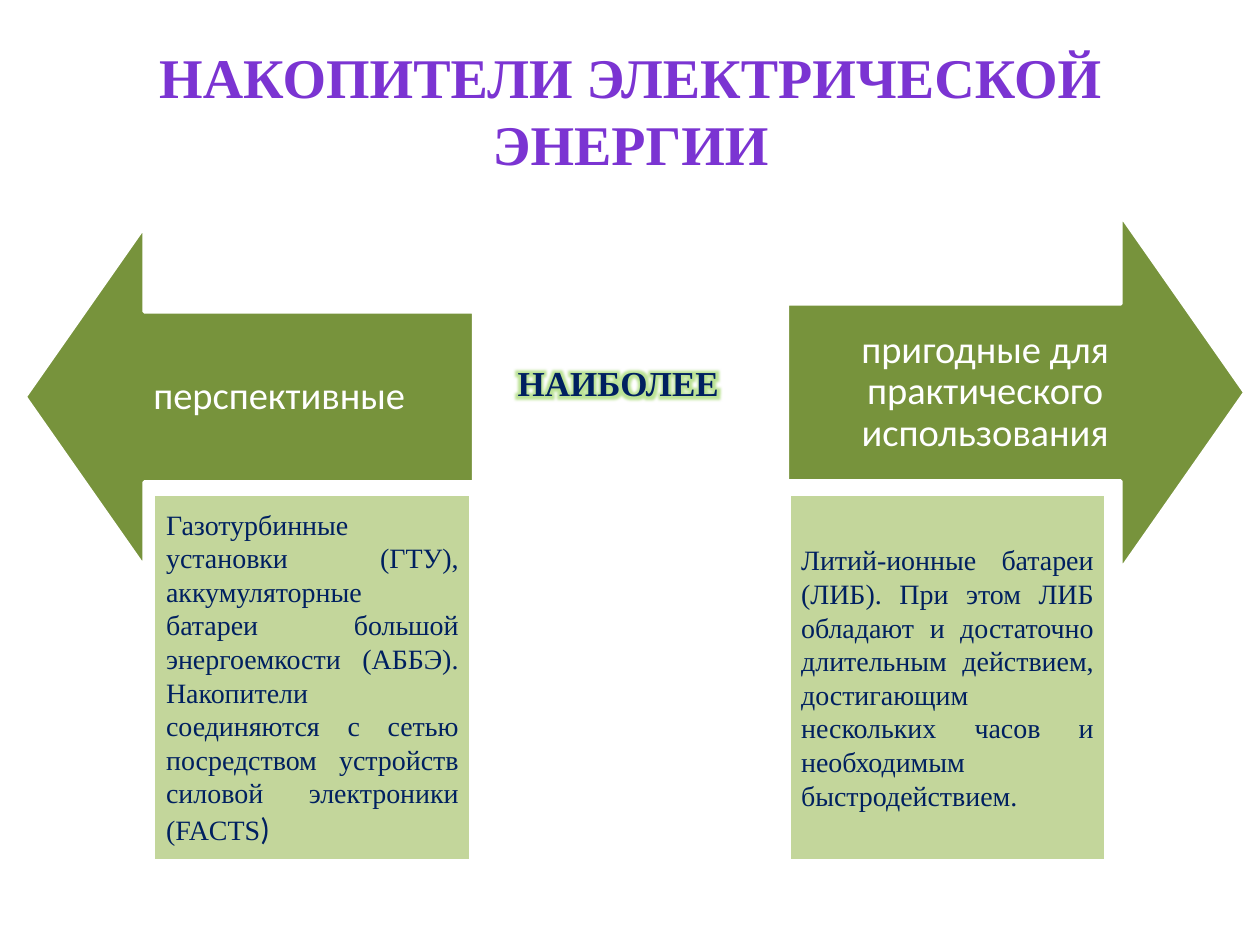
import pptx
import pptx.dml.color
import pptx.enum.shapes
import pptx.enum.text
import pptx.oxml
import pptx.oxml.ns
import pptx.util

SHAPE = pptx.enum.shapes.MSO_SHAPE
ALIGN = pptx.enum.text.PP_ALIGN
ANCHOR = pptx.enum.text.MSO_ANCHOR
SERIF, SANS = "Times New Roman", "Calibri"
WIDTH, HEIGHT = 10, 7.5
COLORS = {
    "title": "7B34D2",
    "arrow": "77933C",
    "panel": "C3D69B",
    "navy": "002060",
    "white": "FFFFFF",
    "glow": "B5E08A",
}
PANEL_TOP, PANEL_WIDTH, PANEL_HEIGHT = 3.92, 2.52, 2.91


def rgb(name):
    return pptx.dml.color.RGBColor.from_string(COLORS[name])


def inches(*lengths):
    return [pptx.util.Inches(n) for n in lengths]


def format_run(r, font, size, color, bold=False):
    r.font.name = font
    r.font.size = pptx.util.Pt(size)
    r.font.bold = bold
    r.font.color.rgb = rgb(color)


def add_text(s, box, text, size, color, align):
    """Add a bold serif text box and return its run."""
    tf = s.shapes.add_textbox(*inches(*box)).text_frame
    tf.word_wrap = True
    p = tf.paragraphs[0]
    p.text = text
    p.alignment = align
    r = p.runs[0]
    format_run(r, SERIF, size, color, bold=True)
    return r


def add_glow(r, color, radius):
    effects = pptx.oxml.parse_xml(
        f'<a:effectLst {pptx.oxml.ns.nsdecls("a")}>'
        f'<a:glow rad="{pptx.util.Pt(radius)}"><a:srgbClr val="{COLORS[color]}">'
        '<a:alpha val="90000"/></a:srgbClr></a:glow></a:effectLst>')
    r.font.fill  # the fill comes before the effects
    r.font._element.find(pptx.oxml.ns.qn("a:solidFill")).addnext(effects)


def add_block(s, kind, box, fill, text, align):
    """Add a white-edged shape with middle-anchored text and return it."""
    sp = s.shapes.add_shape(kind, *inches(*box))
    sp.shadow.inherit = False
    sp.fill.solid()
    sp.fill.fore_color.rgb = rgb(fill)
    sp.line.color.rgb = rgb("white")
    sp.line.width = pptx.util.Pt(2)
    tf = sp.text_frame
    tf.word_wrap = True
    tf.vertical_anchor = ANCHOR.MIDDLE
    tf.paragraphs[0].text = text
    tf.paragraphs[0].alignment = align
    return sp


def add_arrow(s, kind, box, text):
    sp = add_block(s, kind, box, "arrow", text, ALIGN.CENTER)
    sp.adjustments[0], sp.adjustments[1] = 0.5, 0.35
    tf = sp.text_frame
    inset = pptx.util.Inches(0.17)
    tf.margin_left = tf.margin_right = tf.margin_top = tf.margin_bottom = inset
    p = tf.paragraphs[0]
    p.line_spacing = 0.9
    format_run(p.runs[0], SANS, 22, "white")


def add_panel(s, left, text):
    """Add a description panel and return its paragraph."""
    box = (left, PANEL_TOP, PANEL_WIDTH, PANEL_HEIGHT)
    sp = add_block(s, SHAPE.RECTANGLE, box, "panel", text, ALIGN.JUSTIFY)
    p = sp.text_frame.paragraphs[0]
    format_run(p.runs[0], SERIF, 16, "navy")
    return p


def main():
    prs = pptx.Presentation()
    prs.slide_width, prs.slide_height = inches(WIDTH, HEIGHT)
    s = prs.slides.add_slide(prs.slide_layouts[6])

    add_text(s, (0.28, 0.29, 9.45, 1.18), "НАКОПИТЕЛИ ЭЛЕКТРИЧЕСКОЙ ЭНЕРГИИ",
             32, "title", ALIGN.CENTER)
    add_arrow(s, SHAPE.LEFT_ARROW, (0.2, 1.8, 3.56, 2.7), "перспективные")
    add_arrow(s, SHAPE.RIGHT_ARROW, (6.25, 1.71, 3.63, 2.81),
              "пригодные для практического использования")
    r = add_text(s, (4.01, 2.82, 2.25, 0.44), "НАИБОЛЕЕ", 20, "navy", ALIGN.LEFT)
    add_glow(r, "glow", 11)

    p = add_panel(s, 1.22, "Газотурбинные установки (ГТУ), аккумуляторные батареи "
                  "большой энергоемкости (АББЭ). Накопители соединяются с сетью "
                  "посредством устройств силовой электроники (FACTS")
    r = p.add_run()
    r.text = ")"
    format_run(r, SANS, 18, "navy")
    add_panel(s, 6.26, "Литий-ионные батареи (ЛИБ). При этом ЛИБ обладают и достаточно "
              "длительным действием, достигающим нескольких часов и необходимым "
              "быстродействием.")

    prs.save("out.pptx")


if __name__ == "__main__":
    main()
